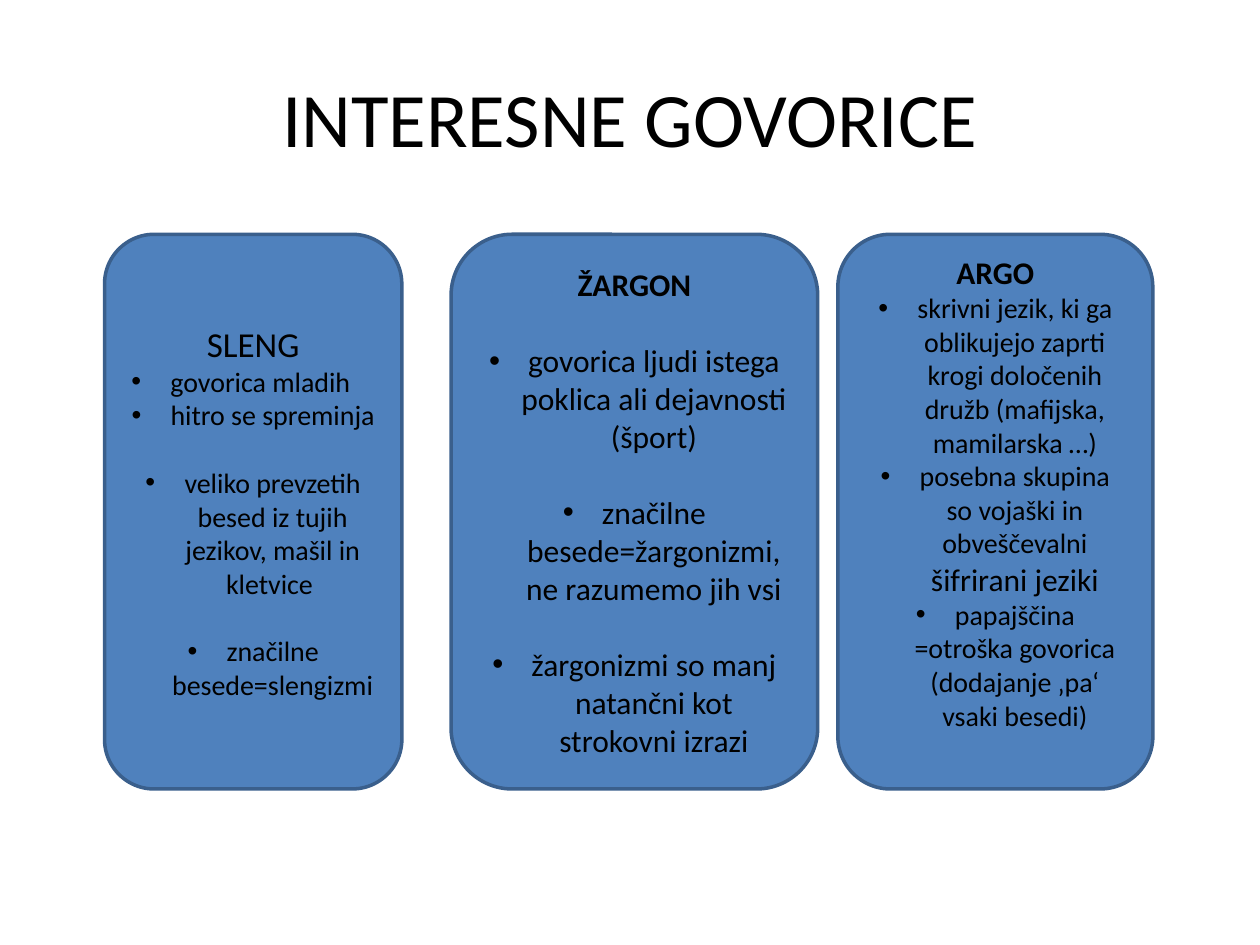
from dataclasses import dataclass

from lxml.etree import SubElement
from pptx import Presentation
from pptx.dml.color import RGBColor
from pptx.enum.shapes import MSO_SHAPE as Shape
from pptx.enum.text import MSO_ANCHOR as Anchor, PP_ALIGN as Align
from pptx.oxml.ns import qn
from pptx.util import Inches, Pt


@dataclass(frozen=True)
class Theme:
    font: str = "Calibri"
    text: RGBColor = RGBColor(0, 0, 0)
    fill: RGBColor = RGBColor(0x4F, 0x81, 0xBD)
    line: RGBColor = RGBColor(0x3A, 0x5F, 0x8C)
    line_width: int = Pt(2)
    title: int = 44
    large: int = 20
    medium: int = 18
    small: int = 16
    line_height: float = 1.22
    indent: int = Inches(0.31)


T = Theme()
W, H = Inches(10), Inches(7.5)
CARD_TOP, CARD_HEIGHT = 0.248, 0.587


@dataclass(frozen=True)
class Item:
    """A bullet; gap is the number of line heights left above it."""
    text: str
    gap: int = 0
    align: Align = Align.CENTER
    tail: str = ""


@dataclass(frozen=True)
class Card:
    left: float
    width: float
    heading: str
    items: tuple
    heading_size: int = T.medium
    bold: bool = True
    size: int = T.small
    bottom_lines: int = 0


CARDS = (
    Card(0.083, 0.236, "SLENG", (
        Item("govorica mladih", align=Align.LEFT),
        Item("hitro se spreminja"),
        Item("veliko prevzetih besed iz tujih jezikov, mašil in kletvice ", gap=1),
        Item("značilne besede=slengizmi", gap=1),
    ), heading_size=T.large, bold=False),
    Card(0.358, 0.291, "ŽARGON", (
        Item("govorica ljudi istega poklica ali dejavnosti (šport)", gap=1),
        Item("značilne besede=žargonizmi, ne razumemo jih vsi", gap=1),
        Item("žargonizmi so manj natančni kot strokovni izrazi", gap=1),
    ), size=T.medium),
    Card(0.665, 0.25, "ARGO", (
        Item("skrivni jezik, ki ga oblikujejo zaprti krogi določenih družb "
             "(mafijska, mamilarska …)"),
        Item("posebna skupina so vojaški in obveščevalni ", tail="šifrirani jeziki"),
        Item("papajščina =otroška govorica (dodajanje ‚pa‘ vsaki besedi)"),
    ), bottom_lines=1),
)


def add_run(p, text, size, bold=False):
    r = p.add_run()
    r.text = text
    style = {"name": T.font, "size": Pt(size), "bold": bold}
    for name, value in style.items():
        setattr(r.font, name, value)
    r.font.color.rgb = T.text


def set_bullet(p):
    pPr = p._p.get_or_add_pPr()
    pPr.set("marL", str(T.indent))
    pPr.set("indent", str(-T.indent))
    SubElement(pPr, qn("a:buFont")).set("typeface", "Arial")
    SubElement(pPr, qn("a:buChar")).set("char", "•")


def add_title(slide, text):
    tf = slide.shapes.title.text_frame
    tf.vertical_anchor = Anchor.MIDDLE
    p = tf.paragraphs[0]
    p.alignment = Align.CENTER
    add_run(p, text, T.title)


def add_card(slide, card, left, top, width, height):
    s = slide.shapes.add_shape(Shape.ROUNDED_RECTANGLE, left, top, width, height)
    s.shadow.inherit = False
    s.fill.solid()
    s.fill.fore_color.rgb = T.fill
    s.line.color.rgb = T.line
    s.line.width = T.line_width

    tf = s.text_frame
    tf.word_wrap = True
    tf.vertical_anchor = Anchor.MIDDLE
    tf.margin_bottom += Pt(card.bottom_lines * T.medium * T.line_height)
    p = tf.paragraphs[0]
    p.alignment = Align.CENTER
    add_run(p, card.heading, card.heading_size, card.bold)

    for item in card.items:
        p = tf.add_paragraph()
        set_bullet(p)
        p.alignment = item.align
        p.space_before = Pt(round(item.gap * card.size * T.line_height, 1))
        add_run(p, item.text, card.size)
        if item.tail:
            add_run(p, item.tail, T.medium)


def main():
    prs = Presentation()
    prs.slide_width, prs.slide_height = W, H
    slide = prs.slides.add_slide(prs.slide_layouts.get_by_name("Title Only"))
    add_title(slide, "INTERESNE GOVORICE")
    for card in CARDS:
        add_card(slide, card, int(card.left * W), int(CARD_TOP * H),
                 int(card.width * W), int(CARD_HEIGHT * H))
    prs.save("out.pptx")


if __name__ == "__main__":
    main()
